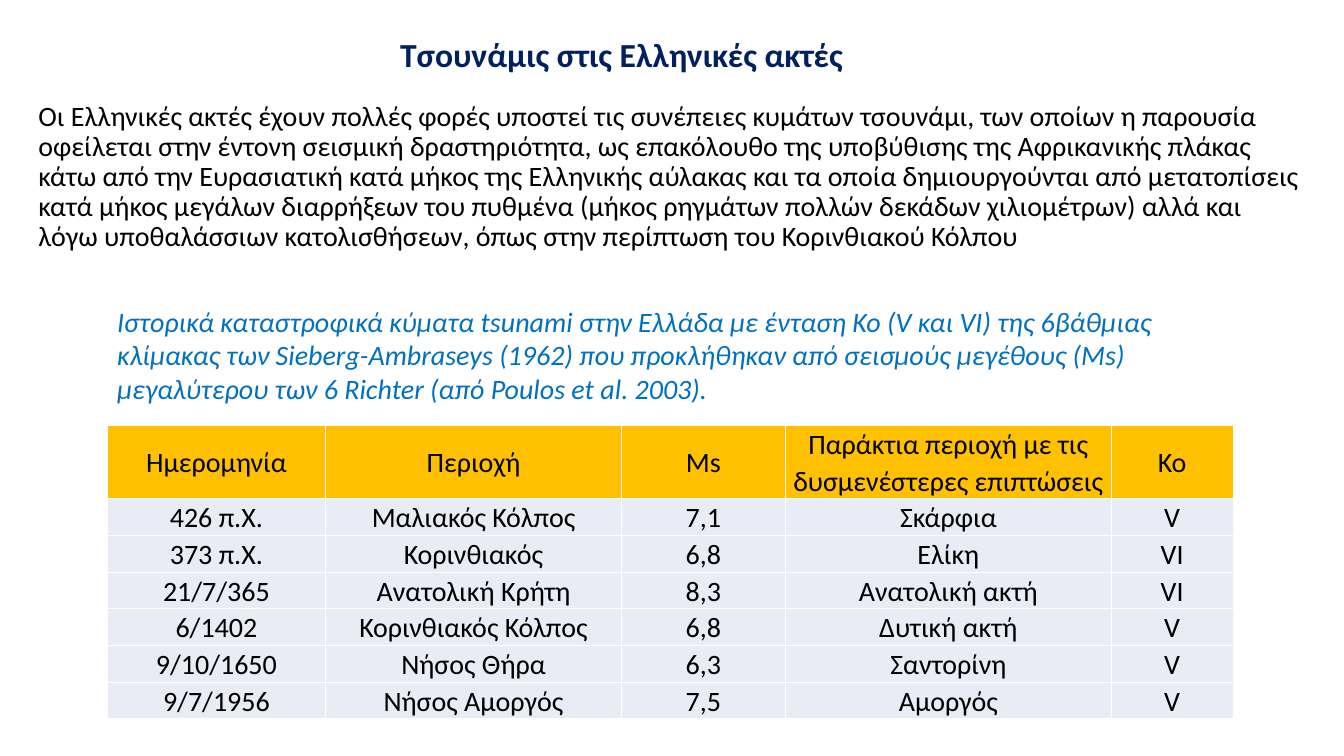
from lxml.etree import SubElement
from pptx import Presentation
from pptx.dml.color import RGBColor
from pptx.enum.shapes import MSO_SHAPE
from pptx.enum.text import MSO_ANCHOR, MSO_AUTO_SIZE, PP_ALIGN
from pptx.oxml.ns import qn
from pptx.util import Pt

NAVY = RGBColor(0x00, 0x20, 0x60)
BLUE = RGBColor(0x00, 0x70, 0xC0)
BLACK = RGBColor(0x00, 0x00, 0x00)
WHITE = RGBColor(0xFF, 0xFF, 0xFF)
GOLD = RGBColor(0xFF, 0xC0, 0x00)
PALE = RGBColor(0xE9, 0xEB, 0xF5)

TITLE = "Τσουνάμις στις Ελληνικές ακτές"
INTRO = (
    "Οι Ελληνικές ακτές έχουν πολλές φορές υποστεί τις συνέπειες κυμάτων τσουνάμι, "
    "των οποίων η παρουσία οφείλεται στην έντονη σεισμική δραστηριότητα, ως επακόλουθο "
    "της υποβύθισης της Αφρικανικής πλάκας κάτω από την Ευρασιατική κατά μήκος της "
    "Ελληνικής αύλακας και τα οποία δημιουργούνται από μετατοπίσεις κατά μήκος μεγάλων "
    "διαρρήξεων του πυθμένα (μήκος ρηγμάτων πολλών δεκάδων χιλιομέτρων) αλλά και λόγω "
    "υποθαλάσσιων κατολισθήσεων, όπως στην περίπτωση του Κορινθιακού Κόλπου"
)
CAPTION = (
    "Ιστορικά καταστροφικά κύματα tsunami στην Ελλάδα με ένταση Κο (V και VI) της "
    "6βάθμιας κλίμακας των Sieberg-Ambraseys (1962) που προκλήθηκαν από σεισμούς "
    "μεγέθους (Μs) μεγαλύτερου των 6 Richter (από Poulos et al. 2003)."
)
TSUNAMIS = [
    ("Ημερομηνία", "Περιοχή", "Ms", "Παράκτια περιοχή με τις δυσμενέστερες επιπτώσεις", "Κο"),
    ("426 π.Χ.", "Μαλιακός Κόλπος", "7,1", "Σκάρφια", "V"),
    ("373 π.Χ.", "Κορινθιακός", "6,8", "Ελίκη", "VI"),
    ("21/7/365", "Ανατολική Κρήτη", "8,3", "Ανατολική ακτή", "VI"),
    ("6/1402", "Κορινθιακός Κόλπος", "6,8", "Δυτική ακτή", "V"),
    ("9/10/1650", "Νήσος Θήρα", "6,3", "Σαντορίνη", "V"),
    ("9/7/1956", "Νήσος Αμοργός", "7,5", "Αμοργός", "V"),
]
COLUMN_WIDTHS = [156.3, 211, 117.4, 232.6, 87.1]
HEADER_HEIGHT, ROW_HEIGHT = 20.9, 16.6


def write(frame, text, size=20, color=BLACK, bold=False, italic=False, font="Calibri",
          align=PP_ALIGN.LEFT, anchor=MSO_ANCHOR.TOP, line_spacing=1.0, space_after=0):
    """Fill a text frame with one formatted paragraph."""
    frame.word_wrap = True
    frame.vertical_anchor = anchor
    para = frame.paragraphs[0]
    para.alignment = align
    para.line_spacing = line_spacing
    para.space_before = Pt(0)
    para.space_after = Pt(space_after)
    span = para.add_run()
    span.text = text
    span.font.name = font
    span.font.size = Pt(size)
    span.font.bold = bold
    span.font.italic = italic
    span.font.color.rgb = color
    return para


class SlideBuilder:
    """Holds the shared style and the current slide."""

    border_width = 1
    cell_margin = 5

    def __init__(self, page):
        self.page = page

    def placeholder(self, index, text, left, top, width, height, **style):
        box = self.page.placeholders[index]
        box.left, box.top, box.width, box.height = map(Pt, (left, top, width, height))
        box.text_frame.auto_size = MSO_AUTO_SIZE.NONE
        return write(box.text_frame, text, line_spacing=0.9, **style)

    def title(self, text, *place):
        self.placeholder(0, text, *place, size=24, color=NAVY, bold=True,
                         anchor=MSO_ANCHOR.MIDDLE)

    def body(self, text, *place):
        properties = self.placeholder(1, text, *place)._p.get_or_add_pPr()
        properties.set("marL", "0")
        properties.set("indent", "0")
        SubElement(properties, qn("a:buNone"))

    def caption(self, text, left, top, width, height):
        box = self.page.shapes.add_shape(
            MSO_SHAPE.RECTANGLE, Pt(left), Pt(top), Pt(width), Pt(height))
        box.shadow.inherit = False
        box.fill.solid()
        box.fill.fore_color.rgb = WHITE
        box.line.fill.background()
        write(box.text_frame, text, color=BLUE, italic=True)

    def cell(self, cell, text, fill):
        cell.margin_left = cell.margin_right = Pt(self.cell_margin)
        cell.margin_top = cell.margin_bottom = 0
        cell.vertical_anchor = MSO_ANCHOR.MIDDLE
        write(cell.text_frame, text, align=PP_ALIGN.CENTER, anchor=None,
              line_spacing=1.07, space_after=8)
        # Borders come before the fill in the cell properties
        properties = cell._tc.get_or_add_tcPr()
        for side in ("lnL", "lnR", "lnT", "lnB"):
            line = SubElement(properties, qn(f"a:{side}"), w=str(Pt(self.border_width)))
            SubElement(SubElement(line, qn("a:solidFill")), qn("a:srgbClr"), val=str(WHITE))
        cell.fill.solid()
        cell.fill.fore_color.rgb = fill

    def table(self, rows, widths, left, top):
        heights = [HEADER_HEIGHT] + [ROW_HEIGHT] * (len(rows) - 1)
        table = self.page.shapes.add_table(
            len(rows), len(widths), Pt(left), Pt(top), Pt(sum(widths)), Pt(sum(heights))).table
        table.first_row = table.horz_banding = False
        for column, width in zip(table.columns, widths):
            column.width = Pt(width)
        for number, (row, height, texts) in enumerate(zip(table.rows, heights, rows)):
            row.height = Pt(height)
            for cell, text in zip(row.cells, texts):
                self.cell(cell, text, PALE if number else GOLD)


def main():
    deck = Presentation()
    deck.slide_width, deck.slide_height = Pt(960), Pt(540)
    builder = SlideBuilder(deck.slides.add_slide(deck.slide_layouts[1]))

    # Heading and introduction
    builder.title(TITLE, 278.6, 11.5, 365.8, 58.3)
    builder.body(INTRO, 20.2, 69.1, 918, 126)

    # Historical tsunamis
    builder.caption(CAPTION, 76.5, 213.8, 805, 80)
    builder.table(TSUNAMIS, COLUMN_WIDTHS, 76.5, 303.8)

    deck.save("out.pptx")


if __name__ == "__main__":
    main()
